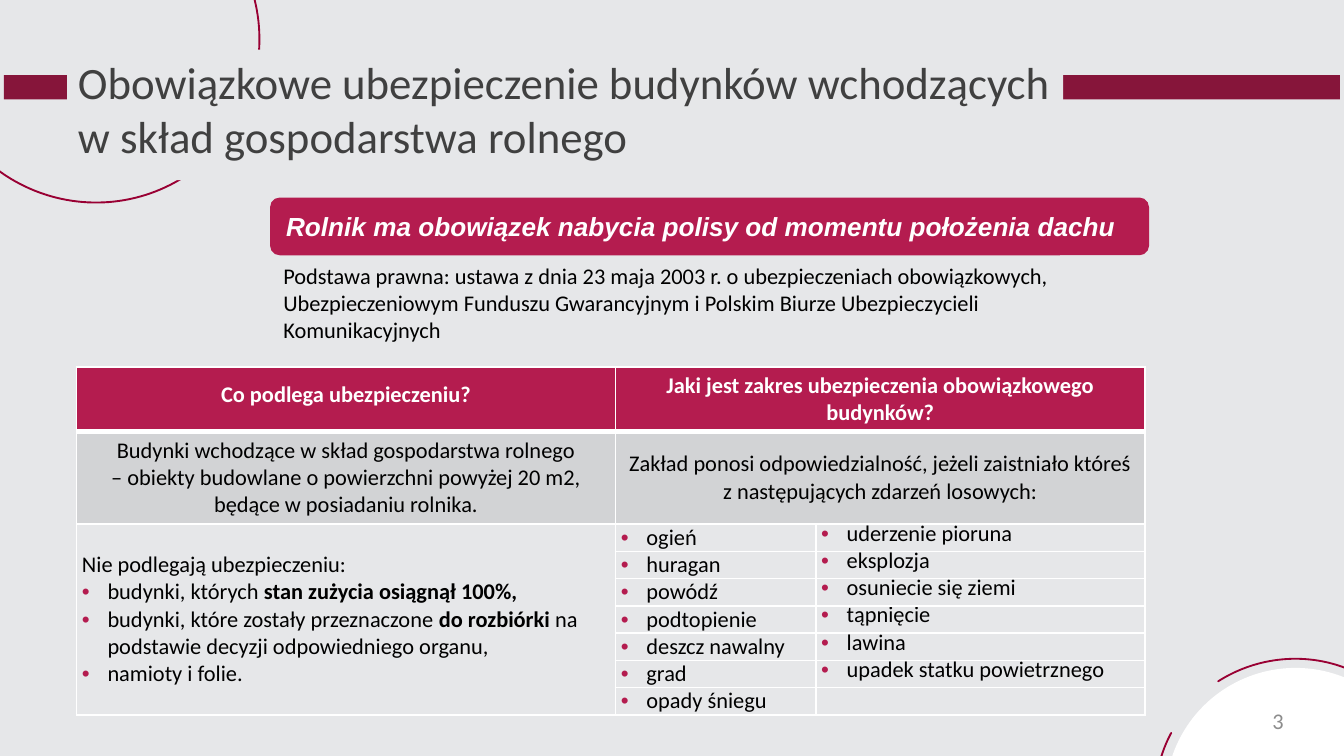
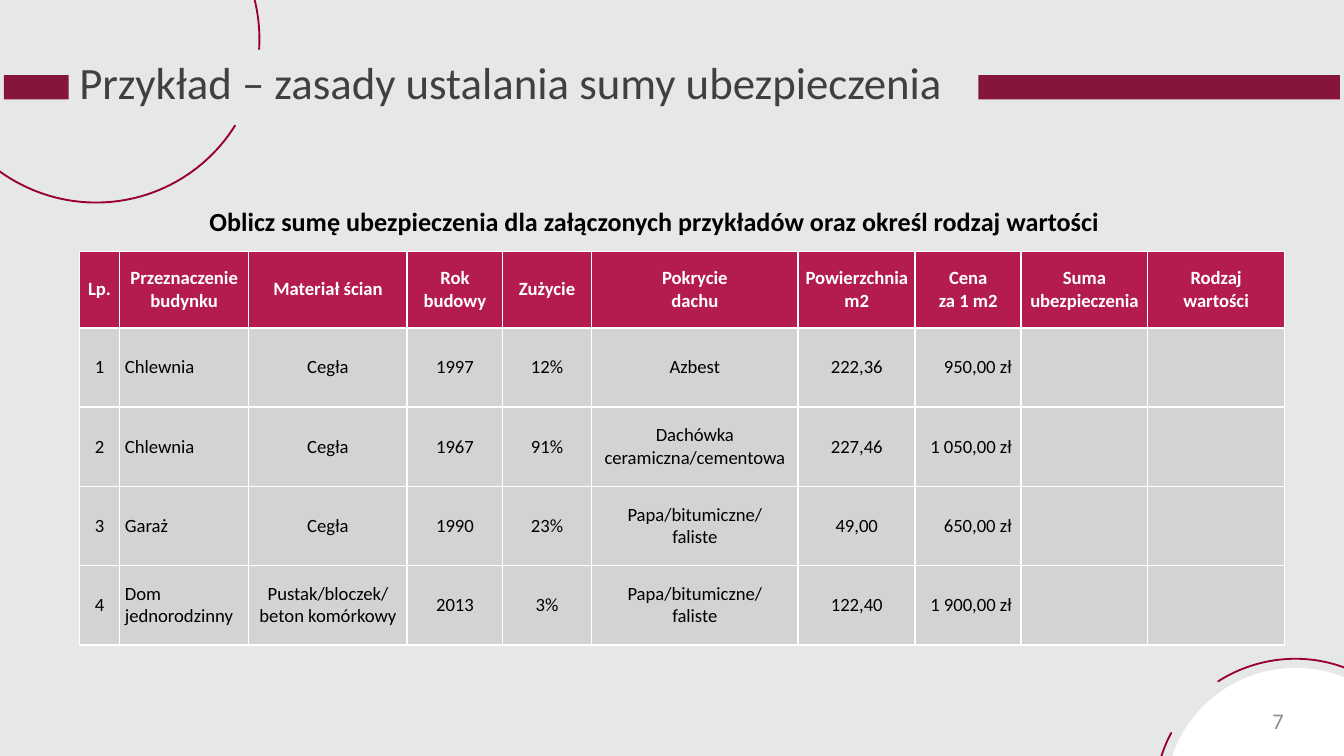
import lxml.etree
import pptx
import pptx.dml.color
import pptx.enum.shapes
import pptx.enum.text
import pptx.oxml.ns
import pptx.util

RGBColor = pptx.dml.color.RGBColor
SHAPE = pptx.enum.shapes.MSO_SHAPE
ALIGN = pptx.enum.text.PP_ALIGN
ANCHOR = pptx.enum.text.MSO_ANCHOR
Pt = pptx.util.Pt
qn = pptx.oxml.ns.qn

PAPER = RGBColor(0xE6, 0xE7, 0xE9)
BURGUNDY = RGBColor(0x86, 0x15, 0x3A)
ARC_LINE = RGBColor(0x99, 0x00, 0x33)
CRIMSON = RGBColor(0xB4, 0x1C, 0x4F)
SILVER = RGBColor(0xD2, 0xD3, 0xD5)
WHITE = RGBColor(0xFF, 0xFF, 0xFF)
BLACK = RGBColor(0, 0, 0)
TITLE_GREY = RGBColor(0x40, 0x40, 0x40)
NUMBER_GREY = RGBColor(0x8C, 0x8C, 0x8C)

GRID_COLUMNS = 100
GRID_ROWS = 56.25
BODY_FONT = "Calibri"
THIN = (0.4, 0.4, 0.4, 0.4)

ARCS = [
    ((-5.1, -9.3, 24.4, 24.5), 12.3, 170.455),
    ((-5.1, -9.4, 24.4, 24.5), 132.3, 155.787),
    ((85.9, 49.2, 21.1, 20.6), 205.2, 170.455),
    ((85.6, 49.1, 21.1, 20.6), 325.2, 163.482),
]

EXCLUSIONS = [
    [("budynki, których ", False), ("stan zużycia osiągnął 100%,", True)],
    [("budynki, które zostały przeznaczone ", False), ("do rozbiórki", True),
     (" na podstawie decyzji odpowiedniego organu,", False)],
    [("namioty i folie.", False)],
]
PERILS = [
    ("ogień", "uderzenie pioruna"),
    ("huragan", "eksplozja"),
    ("powódź", "osuniecie się ziemi"),
    ("podtopienie", "tąpnięcie"),
    ("deszcz nawalny", "lawina"),
    ("grad", "upadek statku powietrznego"),
    ("opady śniegu", ""),
]
BUILDINGS = [
    ("Lp.", "Przeznaczenie budynku", "Materiał ścian", "Rok budowy", "Zużycie",
     "Pokrycie\ndachu", "Powierzchnia m2", "Cena\nza 1 m2",
     "Suma ubezpieczenia", "Rodzaj\nwartości"),
    ("1", "Chlewnia", "Cegła", "1997", "12%", "Azbest", "222,36", "950,00 zł ", "", ""),
    ("2", "Chlewnia", "Cegła", "1967", "91%", "Dachówka ceramiczna/cementowa",
     "227,46", "1 050,00 zł ", "", ""),
    ("3", "Garaż", "Cegła", "1990", "23%", "Papa/bitumiczne/\nfaliste",
     "49,00", "650,00 zł ", "", ""),
    ("4", "Dom jednorodzinny", "Pustak/bloczek/\nbeton komórkowy", "2013", "3%",
     "Papa/bitumiczne/\nfaliste", "122,40", "1 900,00 zł ", "", ""),
]


def grid(count):
    return pptx.util.Inches(count / 10)


def place(item, at):
    item.left, item.top, item.width, item.height = map(grid, at)


def style(para, size, color, bold=False, align=ALIGN.LEFT, font=BODY_FONT):
    para.alignment = align
    para.font.name = font
    para.font.size = Pt(size)
    para.font.bold = bold
    para.font.color.rgb = color


def set_margins(item, margins):
    item.margin_left, item.margin_top, item.margin_right, item.margin_bottom = map(grid, margins)


def add_shape(page, kind, at, fill, line=None):
    shape = page.shapes.add_shape(kind, *map(grid, at))
    shape.shadow.inherit = False
    shape.fill.solid()
    shape.fill.fore_color.rgb = fill
    if line is None:
        shape.line.fill.background()
    else:
        shape.line.color.rgb = line
        shape.line.width = Pt(1)
    return shape


def add_text(page, at, text, size, color, **options):
    box = page.shapes.add_textbox(*map(grid, at))
    box.text_frame.word_wrap = True
    para = box.text_frame.paragraphs[0]
    para.text = text
    style(para, size, color, **options)
    return box


def add_arc(page, at, rotation, start):
    arc = add_shape(page, SHAPE.BLOCK_ARC, at, BURGUNDY, ARC_LINE)
    arc.rotation = rotation
    for index, value in enumerate((start, 1.759, 0)):
        arc.adjustments[index] = value
    return arc


def decorate_master(master, page):
    master.background.fill.solid()
    master.background.fill.fore_color.rgb = PAPER
    arcs = [add_arc(page, *arc) for arc in ARCS]
    band = add_shape(page, SHAPE.RECTANGLE, (0.3, 5.6, 99.4, 1.8), BURGUNDY)
    disc = add_shape(page, SHAPE.OVAL, (86.7, 49.7, 19.4, 19.4), WHITE)
    for number, shape in enumerate(arcs[:2] + [band] + arcs[2:] + [disc], 101):
        shape.element.xpath(".//p:cNvPr")[0].set("id", str(number))
        master.shapes.element.append(shape.element)


def set_title(page, at, text):
    title = page.shapes.title
    place(title, at)
    title.fill.solid()
    title.fill.fore_color.rgb = PAPER
    frame = title.text_frame
    frame.text = text
    frame.word_wrap = True
    frame.auto_size = pptx.enum.text.MSO_AUTO_SIZE.NONE
    frame.vertical_anchor = ANCHOR.TOP
    set_margins(frame, (0.8, 0.4, 0.8, 1.2))
    style(frame.paragraphs[0], 24, TITLE_GREY)


def add_page_number(page, number):
    box = add_text(page, (82.7, 52.1, 13.8, 3), number, 12, NUMBER_GREY, align=ALIGN.RIGHT)
    box.text_frame.vertical_anchor = ANCHOR.MIDDLE


def add_bullet(para):
    properties = para._p.get_or_add_pPr()
    indent = grid(1.9)
    properties.set("marL", str(indent))
    properties.set("indent", str(-indent))
    color = lxml.etree.SubElement(properties, qn("a:buClr"))
    lxml.etree.SubElement(color, qn("a:srgbClr"), val=str(CRIMSON))
    lxml.etree.SubElement(properties, qn("a:buFont"), typeface="Arial")
    lxml.etree.SubElement(properties, qn("a:buChar"), char="•")


def fill_cell(cell, text, size, fill, color=BLACK, bold=False, align=ALIGN.LEFT,
              margins=THIN, bullet=False):
    cell.fill.solid()
    cell.fill.fore_color.rgb = fill
    cell.vertical_anchor = ANCHOR.MIDDLE
    set_margins(cell, margins)
    para = cell.text_frame.paragraphs[0]
    para.text = text
    if bullet and text:
        add_bullet(para)
    style(para, size, color, bold, align)
    return para


def draw_borders(frame, header_points):
    for index, row in enumerate(frame.element.iter(qn("a:tr"))):
        for properties in row.iter(qn("a:tcPr")):
            for position, side in enumerate("LRTB"):
                points = header_points if index == 0 and side == "B" else 1
                line = lxml.etree.Element(qn("a:ln" + side), w=str(Pt(points)))
                fill = lxml.etree.SubElement(line, qn("a:solidFill"))
                lxml.etree.SubElement(fill, qn("a:srgbClr"), val=str(WHITE))
                properties.insert(position, line)


def add_table(page, left, top, columns, rows):
    frame = page.shapes.add_table(len(rows), len(columns), grid(left), grid(top),
                                  grid(sum(columns)), grid(sum(rows)))
    table = frame.table
    table.first_row = False
    table.horz_banding = False
    for column, width in zip(table.columns, columns):
        column.width = grid(width)
    for row, height in zip(table.rows, rows):
        row.height = grid(height)
    return frame


def add_exclusions(cell):
    fill_cell(cell, "Nie podlegają ubezpieczeniu:", 12, PAPER, margins=(0.4, 0, 0, 0))
    for parts in EXCLUSIONS:
        para = cell.text_frame.add_paragraph()
        add_bullet(para)
        style(para, 12, BLACK)
        for text, bold in parts:
            span = para.add_run()
            span.text = text
            span.font.bold = bold


def add_scope_table(page):
    frame = add_table(page, 5.7, 27.3, (40.1, 14.9, 24.5), (4.8, 6.9) + (2.03,) * len(PERILS))
    table = frame.table
    for row, fill in enumerate((CRIMSON, SILVER)):
        fill_cell(table.cell(row, 2), "", 12, fill)
        table.cell(row, 1).merge(table.cell(row, 2))
    heading = dict(size=12, fill=CRIMSON, color=WHITE, bold=True, align=ALIGN.CENTER)
    para = fill_cell(table.cell(0, 0), "Co podlega ubezpieczeniu?", **heading)
    para.line_spacing = Pt(10)
    fill_cell(table.cell(0, 1), "Jaki jest zakres ubezpieczenia obowiązkowego budynków?", **heading)
    summary = dict(size=12, fill=SILVER, align=ALIGN.CENTER)
    fill_cell(table.cell(1, 0), "Budynki wchodzące w skład gospodarstwa rolnego\n"
              "– obiekty budowlane o powierzchni powyżej 20 m2, będące w posiadaniu rolnika.", **summary)
    fill_cell(table.cell(1, 1), "Zakład ponosi odpowiedzialność, jeżeli zaistniało któreś\n"
              "z następujących zdarzeń losowych:", **summary)
    for row, perils in enumerate(PERILS, 2):
        fill_cell(table.cell(row, 0), "", 12, PAPER, margins=(0.4, 0, 0, 0))
        for column, peril in enumerate(perils, 1):
            para = fill_cell(table.cell(row, column), peril, 12, PAPER,
                             margins=(0.4, 0, 0.4, 0), bullet=True)
            if column == 2:
                para.line_spacing = Pt(10)
    table.cell(2, 0).merge(table.cell(len(PERILS) + 1, 0))
    add_exclusions(table.cell(2, 0))
    draw_borders(frame, 3)


def add_buildings_table(page):
    columns = (3, 9.6, 11.8, 7.1, 6.6, 15.4, 8.7, 7.9, 9.4, 10.2)
    frame = add_table(page, 5.9, 18.7, columns, (5.7,) + (5.9,) * 4)
    body_align = {1: ALIGN.LEFT, 7: ALIGN.RIGHT}
    for row, values in enumerate(BUILDINGS):
        for column, text in enumerate(values):
            cell = frame.table.cell(row, column)
            if row == 0:
                fill_cell(cell, text, 10, CRIMSON, WHITE, True, ALIGN.CENTER)
            else:
                fill_cell(cell, text, 10, SILVER, align=body_align.get(column, ALIGN.CENTER))
    draw_borders(frame, 1)


def add_banner(page, at, text):
    banner = add_shape(page, SHAPE.ROUNDED_RECTANGLE, at, CRIMSON)
    banner.adjustments[0] = 0.167
    banner.text_frame.word_wrap = True
    banner.text_frame.vertical_anchor = ANCHOR.MIDDLE
    para = banner.text_frame.paragraphs[0]
    para.text = text
    style(para, 14, WHITE, bold=True, font="Arial")
    para.font.italic = True


def build_obligation(page):
    set_title(page, (5, 3.7, 74.1, 9.7),
              "Obowiązkowe ubezpieczenie budynków wchodzących w skład gospodarstwa rolnego")
    add_page_number(page, "3")
    add_scope_table(page)
    add_banner(page, (20.1, 14.7, 65.4, 4.3),
               "Rolnik ma obowiązek nabycia polisy od momentu położenia dachu")
    add_text(page, (20.1, 19, 65.4, 7.1),
             "Podstawa prawna: ustawa z dnia 23 maja 2003 r. o ubezpieczeniach obowiązkowych, "
             "Ubezpieczeniowym Funduszu Gwarancyjnym i Polskim Biurze Ubezpieczycieli "
             "Komunikacyjnych", 12, BLACK)


def build_example(page):
    set_title(page, (5.1, 3.7, 67.7, 5.6), "Przykład – zasady ustalania sumy ubezpieczenia")
    add_page_number(page, "7")
    add_buildings_table(page)
    add_text(page, (14.6, 14.8, 81.1, 3.4),
             "Oblicz sumę ubezpieczenia dla załączonych przykładów oraz określ rodzaj wartości",
             14, BLACK, bold=True)


def main():
    deck = pptx.Presentation()
    deck.slide_width = grid(GRID_COLUMNS)
    deck.slide_height = grid(GRID_ROWS)
    title_only = deck.slide_layouts[5]
    pages = [deck.slides.add_slide(title_only) for _ in range(2)]
    decorate_master(deck.slide_master, pages[0])
    build_obligation(pages[0])
    build_example(pages[1])
    deck.save("out.pptx")


if __name__ == "__main__":
    main()
